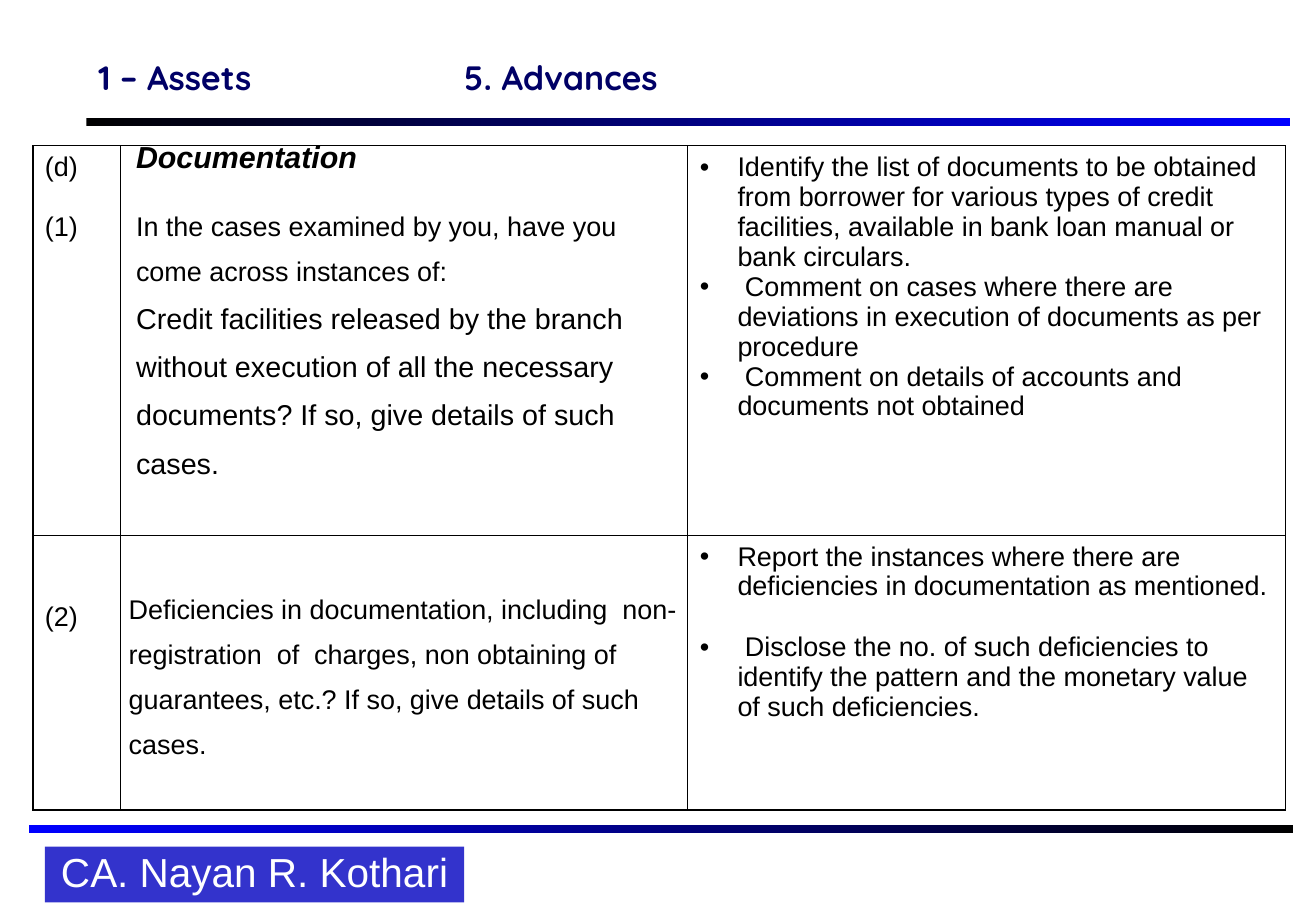
"""Builds the audit slide on documentation of advances."""
import pptx
import pptx.util
import pptx.dml.color
import pptx.enum.text
import pptx.enum.shapes
import pptx.oxml
import pptx.oxml.ns
from dataclasses import dataclass

Inches, Pt = pptx.util.Inches, pptx.util.Pt
RGB = pptx.dml.color.RGBColor.from_string
ALIGN, ANCHOR = pptx.enum.text.PP_ALIGN, pptx.enum.text.MSO_ANCHOR
RECT = pptx.enum.shapes.MSO_SHAPE.RECTANGLE


@dataclass(frozen=True)
class Theme:
    """Colours, fonts and type sizes of the slide."""
    ink: str = "000000"
    paper: str = "FFFFFF"
    navy: str = "000066"
    blue: str = "0000FF"
    badge: str = "3333CC"
    head: str = "Quicksand"
    body: str = "Arial"
    title: int = 20
    name: int = 24
    topic: int = 18
    large: int = 17
    text: int = 16


T = Theme()
TITLE = "1 – Assets\t5. Advances"
NAME = "CA. Nayan R. Kothari"
BARS = [
    ((0.71, 0.97, 9.91, 0.07), (T.ink, T.blue)),
    ((0.24, 6.79, 10.4, 0.07), (T.blue, T.ink)),
]
COLS, ROWS = (0.72, 4.67, 4.92), (3.21, 2.26)
PAD = {"left": 0.1, "right": 0.1, "top": 0.05, "bottom": 0.05}
CELLS = [
    [
        {"paras": [("(d)", {}), ("(1)", {"before": 18})]},
        {"pad": {"left": 0.13}, "paras": [
            ("Documentation", {"size": T.topic, "bold": True, "italic": True,
                               "lead": Pt(13.5)}),
            ("In the cases examined by you, have you come across instances of:",
             {"lead": 1.5, "before": 13.5}),
            ("Credit facilities released by the branch without execution of all "
             "the necessary documents? If so, give details of such cases.",
             {"size": T.large, "lead": 1.5}),
        ]},
        {"paras": [
            ("Identify the list of documents to be obtained from borrower for "
             "various types of credit facilities, available in bank loan manual "
             "or bank circulars.", {"bullet": True}),
            (" Comment on cases where there are deviations in execution of "
             "documents as per procedure", {"bullet": True}),
            (" Comment on details of accounts and documents not obtained",
             {"bullet": True}),
        ]},
    ],
    [
        {"pad": {"top": 0.55}, "paras": [("(2)", {})]},
        {"pad": {"left": 0.07, "right": 0, "top": 0.37, "bottom": 0}, "paras": [
            ("Deficiencies in documentation, including  non-registration  of  "
             "charges, non obtaining of guarantees, etc.? If so, give details of "
             "such cases.", {"lead": 1.5}),
        ]},
        {"paras": [
            ("Report the instances where there are deficiencies in documentation "
             "as mentioned.", {"bullet": True}),
            (" Disclose the no. of such deficiencies to identify the pattern and "
             "the monetary value of such deficiencies.",
             {"bullet": True, "before": 18}),
        ]},
    ],
]


def assign(item, values):
    """Set each named attribute on the item."""
    for key, value in values.items():
        setattr(item, key, value)


def node(owner, xml):
    """Append an element written in DrawingML to its owner."""
    space = pptx.oxml.ns.nsdecls("a")
    tag, rest = xml[:-2].split(" ", 1)
    owner.append(pptx.oxml.parse_xml(f"{tag} {space} {rest}/>"))


def write(para, text, size=T.text, font=T.body, color=T.ink, bold=False,
          italic=False, lead=1.0, before=0, align=ALIGN.LEFT, bullet=False):
    """Fill one paragraph with formatted text."""
    assign(para, {"alignment": align, "line_spacing": lead,
                  "space_before": Pt(before), "space_after": Pt(0)})
    if bullet:
        props = para._p.get_or_add_pPr()
        props.set("marL", str(Inches(0.31)))
        props.set("indent", str(-Inches(0.31)))
        node(props, '<a:buFont typeface="Arial"/>')
        node(props, '<a:buChar char="•"/>')
    run = para.add_run()
    run.text = text
    assign(run.font, {"size": Pt(size), "name": font, "bold": bold,
                      "italic": italic})
    run.font.color.rgb = RGB(color)


def block(slide, box):
    """Add a plain rectangle without line or shadow."""
    shape = slide.shapes.add_shape(RECT, *map(Inches, box))
    shape.shadow.inherit = False
    shape.line.fill.background()
    return shape


def bar(slide, box, ends):
    """Add a rule that fades from one colour to the other."""
    fill = block(slide, box).fill
    fill.gradient()
    fill.gradient_angle = 0
    for stop, color, place in zip(fill.gradient_stops, ends, (0, 1)):
        stop.color.rgb = RGB(color)
        stop.position = place


def edge(cell):
    """Draw a thin border on all sides of a cell."""
    props = cell._tc.get_or_add_tcPr()
    space = pptx.oxml.ns.nsdecls("a")
    for spot, side in enumerate("LRTB"):
        props.insert(spot, pptx.oxml.parse_xml(
            f'<a:ln{side} {space} w="{Pt(1)}"><a:solidFill>'
            f'<a:srgbClr val="{T.ink}"/></a:solidFill></a:ln{side}>'))


def grid(slide):
    """Add the table of questions and guidance."""
    size = (0.27, 1.2, sum(COLS), sum(ROWS))
    table = slide.shapes.add_table(len(ROWS), len(COLS), *map(Inches, size)).table
    assign(table, {"first_row": False, "horz_banding": False})
    for col, width in zip(table.columns, COLS):
        col.width = Inches(width)
    for row, height, line in zip(table.rows, ROWS, CELLS):
        row.height = Inches(height)
        for cell, data in zip(row.cells, line):
            pad = {**PAD, **data.get("pad", {})}
            assign(cell, {f"margin_{k}": Inches(v) for k, v in pad.items()})
            cell.vertical_anchor = ANCHOR.TOP
            cell.fill.solid()
            cell.fill.fore_color.rgb = RGB(T.paper)
            edge(cell)
            frame = cell.text_frame
            for spot, (text, style) in enumerate(data["paras"]):
                para = frame.add_paragraph() if spot else frame.paragraphs[0]
                write(para, text, **style)


def main():
    """Build and save the slide."""
    deck = pptx.Presentation()
    assign(deck, {"slide_width": Inches(10.83), "slide_height": Inches(7.5)})
    slide = deck.slides.add_slide(deck.slide_layouts[5])
    for box, ends in BARS:
        bar(slide, box, ends)

    badge = block(slide, (0.37, 6.97, 3.45, 0.46))
    badge.fill.solid()
    badge.fill.fore_color.rgb = RGB(T.badge)
    assign(badge.text_frame, {"word_wrap": False,
                              "vertical_anchor": ANCHOR.MIDDLE})
    write(badge.text_frame.paragraphs[0], NAME, size=T.name, color=T.paper,
          lead=0.9, align=ALIGN.CENTER)

    title = slide.shapes.title
    assign(title, {"left": Inches(0.71), "top": Inches(0),
                   "width": Inches(9.91), "height": Inches(1.2)})
    assign(title.text_frame, {"vertical_anchor": ANCHOR.BOTTOM,
                              "margin_bottom": Inches(0.4), "word_wrap": True})
    para = title.text_frame.paragraphs[0]
    props = para._p.get_or_add_pPr()
    node(props, "<a:tabLst />")
    node(props[-1], f'<a:tab pos="{Inches(3.01)}" algn="l"/>')
    write(para, TITLE, size=T.title, font=T.head, color=T.navy, bold=True)
    grid(slide)
    deck.save("out.pptx")


if __name__ == "__main__":
    main()
